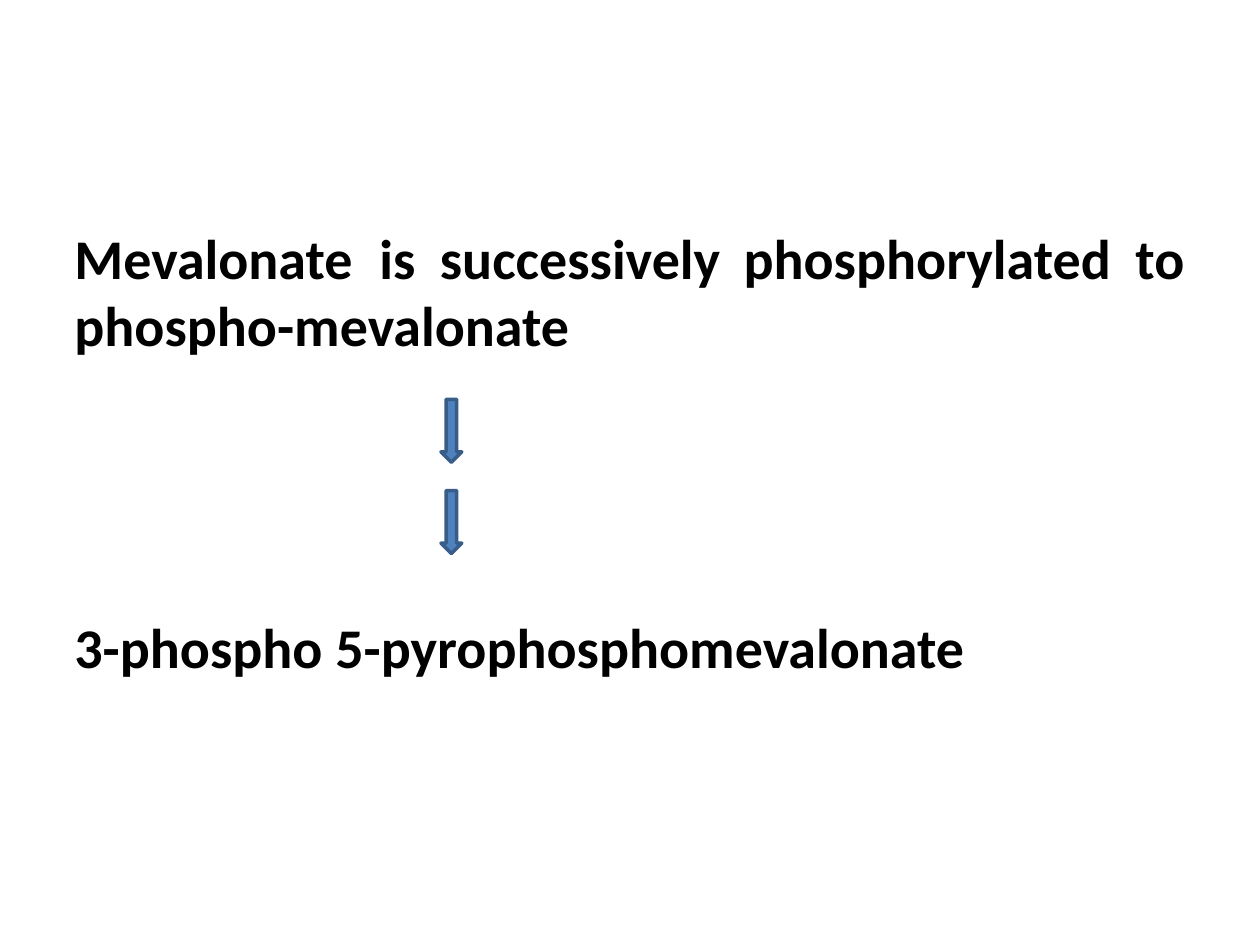
from lxml.etree import SubElement
from pptx import Presentation
from pptx.dml.color import RGBColor
from pptx.enum.shapes import MSO_SHAPE
from pptx.oxml.ns import qn
from pptx.util import Cm, Pt


def color(hex_code):
    return RGBColor.from_string(hex_code)


class PageBuilder:
    font = "Calibri"
    text_size = 32
    text_color = "000000"
    arrow_fill = "4F81BC"
    arrow_line = "385D89"

    def __init__(self, page):
        self.page = page

    def text(self, left, top, width, height, lines, tab_stops=()):
        box = self.page.shapes.add_textbox(Cm(left), Cm(top), Cm(width), Cm(height))
        frame = box.text_frame
        frame.word_wrap = True
        frame.margin_left = frame.margin_right = frame.margin_bottom = 0
        frame.margin_top = Cm(0.03)
        frame.text = "\n".join(lines)
        frame.paragraphs[0].space_before = Pt(1)
        for para in frame.paragraphs:
            for span in para.runs:
                span.font.name = self.font
                span.font.size = Pt(self.text_size)
                span.font.bold = True
                span.font.color.rgb = color(self.text_color)
        if tab_stops:
            self.set_tabs(frame.paragraphs[0], tab_stops)

    def set_tabs(self, para, positions):
        tab_list = SubElement(para._p.get_or_add_pPr(), qn("a:tabLst"))
        for position in positions:
            SubElement(tab_list, qn("a:tab"), pos=str(Cm(position)), algn="l")

    def down_arrow(self, left, top, width, height):
        arrow = self.page.shapes.add_shape(
            MSO_SHAPE.DOWN_ARROW, Cm(left), Cm(top), Cm(width), Cm(height))
        arrow.shadow.inherit = False
        arrow.fill.solid()
        arrow.fill.fore_color.rgb = color(self.arrow_fill)
        arrow.line.color.rgb = color(self.arrow_line)
        arrow.line.width = Pt(2)


def main():
    deck = Presentation()
    deck.slide_width, deck.slide_height = Cm(25.4), Cm(19.05)
    blank_layout = deck.slide_layouts[6]
    builder = PageBuilder(deck.slides.add_slide(blank_layout))

    # Starting compound, first line spread over tab stops
    builder.text(1.5, 4.47, 22.4, 2.79,
                 ["Mevalonate\tis\tsuccessively\tphosphorylated\tto",
                  "phospho-mevalonate"],
                 tab_stops=[6.15, 7.37, 13.49, 21.39])

    # Product
    builder.text(1.5, 12.32, 18.01, 1.42, ["3-phospho 5-pyrophosphomevalonate"])

    # Two reaction steps
    for step in range(2):
        builder.down_arrow(8.89, 8.05 + 1.84 * step, 0.42, 1.27)

    deck.save("out.pptx")


if __name__ == "__main__":
    main()
